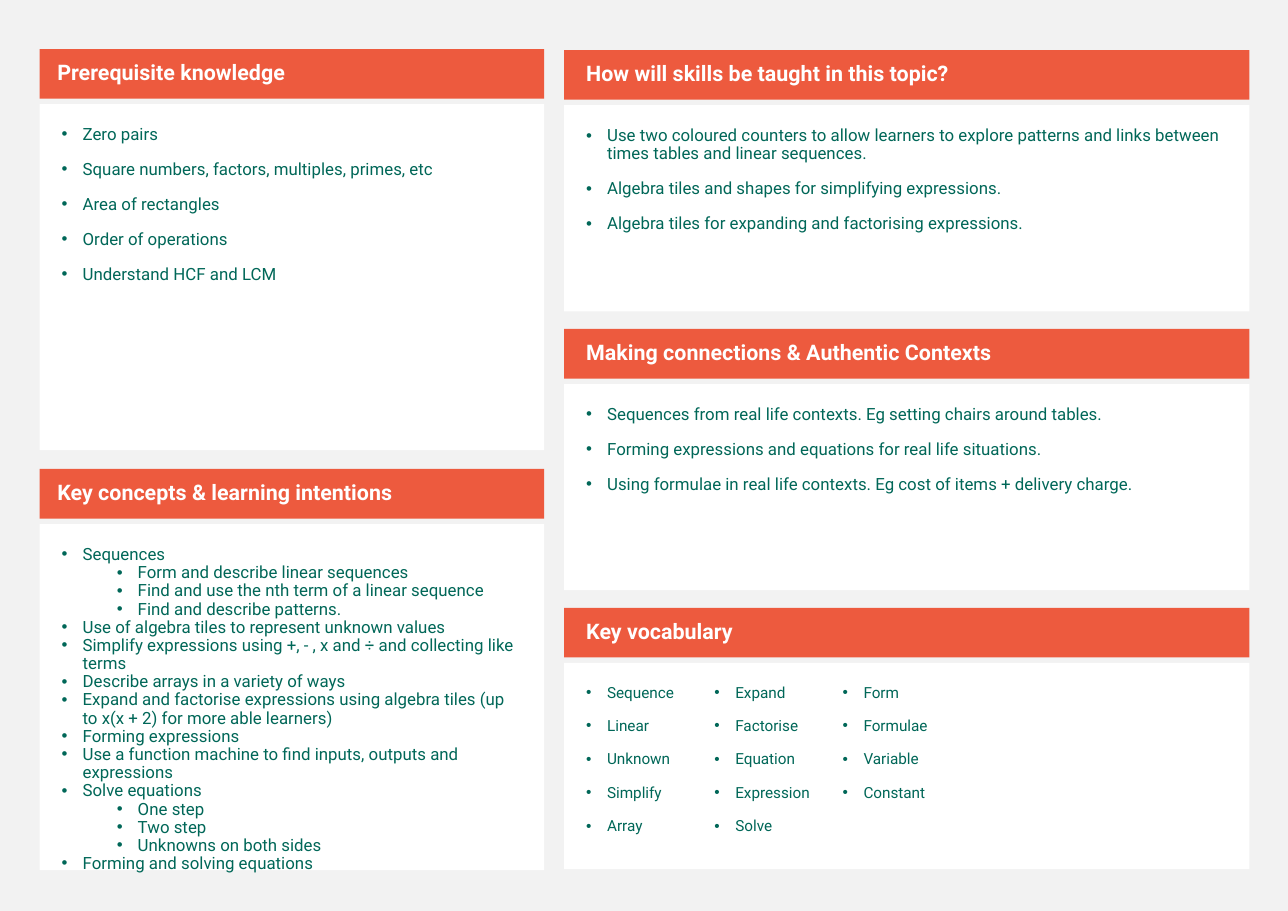
import lxml.etree
import pptx
import pptx.dml.color
import pptx.enum.shapes
import pptx.enum.text
import pptx.oxml.ns
import pptx.util

PAPER = pptx.dml.color.RGBColor(0xF2, 0xF2, 0xF2)
WHITE = pptx.dml.color.RGBColor(0xFF, 0xFF, 0xFF)
ORANGE = pptx.dml.color.RGBColor(0xED, 0x5A, 0x3E)
GREEN = pptx.dml.color.RGBColor(0x00, 0x67, 0x58)
FONT = "Roboto"
COLUMNS, ROWS = 1169, 827
CELL = pptx.util.Inches(0.01)
HEADING_ROWS, POINTS_OFFSET = 45, 50

PREREQUISITES = [
    "Zero pairs",
    "Square numbers, factors, multiples, primes, etc",
    "Area of rectangles",
    "Order of operations",
    "Understand HCF and LCM",
]
CONCEPTS = [
    "Sequences",
    [
        "Form and describe linear sequences",
        "Find and use the nth term of a linear sequence",
        "Find and describe patterns.",
    ],
    "Use of algebra tiles to represent unknown values",
    "Simplify expressions using +, - , x and ÷ and collecting like terms",
    "Describe arrays in a variety of ways",
    "Expand and factorise expressions using algebra tiles (up to x(x + 2) for more able learners)",
    "Forming expressions",
    "Use a function machine to find inputs, outputs and expressions",
    "Solve equations",
    ["One step", "Two step", "Unknowns on both sides"],
    "Forming and solving equations",
]
SKILLS = [
    "Use two coloured counters to allow learners to explore patterns and links "
    "between times tables and linear sequences.",
    "Algebra tiles and shapes for simplifying expressions.",
    "Algebra tiles for expanding and factorising expressions.",
]
CONNECTIONS = [
    "Sequences from real life contexts. Eg setting chairs around tables.",
    "Forming expressions and equations for real life situations.",
    "Using formulae in real life contexts. Eg cost of items + delivery charge.",
]
VOCABULARY = [
    "Sequence", "Linear", "Unknown", "Simplify", "Array",
    "Expand", "Factorise", "Equation", "Expression", "Solve",
    "Form", "Formulae", "Variable", "Constant",
]


def write(frame, text, size=11, color=GREEN, bold=False, before=11, level=0, bullet=True):
    """Add one formatted paragraph to a text frame."""
    first = frame.paragraphs[0]
    paragraph = frame.add_paragraph() if first.runs else first
    paragraph.alignment = pptx.enum.text.PP_ALIGN.LEFT
    paragraph.level = level
    paragraph.line_spacing = 0.9
    paragraph.space_before = pptx.util.Pt(before)
    run = paragraph.add_run()
    run.text = text
    run.font.name = FONT
    run.font.size = pptx.util.Pt(size)
    run.font.bold = bold
    run.font.color.rgb = color
    if bullet:
        properties = paragraph._p.get_or_add_pPr()
        properties.set("marL", str(int((19 + 50 * level) * CELL)))
        properties.set("indent", str(int(-19 * CELL)))
        for tag, key, value in (("a:buFont", "typeface", "Arial"), ("a:buChar", "char", "•")):
            mark = lxml.etree.SubElement(properties, pptx.oxml.ns.qn(tag))
            mark.set(key, value)


class Planner:
    """Build a topic overview from stacked panels on a fine grid."""

    def __init__(self):
        """Start a presentation with one plain slide."""
        self.deck = pptx.Presentation()
        self.deck.slide_width = COLUMNS * CELL
        self.deck.slide_height = ROWS * CELL
        self.slide = self.deck.slides.add_slide(self.deck.slide_layouts[6])
        self.slide.background.fill.solid()
        self.slide.background.fill.fore_color.rgb = PAPER

    def box(self, left, top, width, height, color, insets):
        """Draw a filled rectangle and return its text frame."""
        area = [round(cells * CELL) for cells in (left, top, width, height)]
        panel = self.slide.shapes.add_shape(pptx.enum.shapes.MSO_SHAPE.RECTANGLE, *area)
        panel.shadow.inherit = False
        panel.fill.solid()
        panel.fill.fore_color.rgb = color
        panel.line.fill.background()
        frame = panel.text_frame
        frame.word_wrap = True
        frame.margin_left, frame.margin_top, frame.margin_right, frame.margin_bottom = (
            cells * CELL for cells in insets
        )
        return frame

    def heading(self, text, left, top, width, indent):
        """Draw an orange heading bar."""
        frame = self.box(left, top, width, HEADING_ROWS, ORANGE, (indent, 5, 10, 5))
        frame.vertical_anchor = pptx.enum.text.MSO_ANCHOR.MIDDLE
        write(frame, text, size=14, color=WHITE, bold=True, bullet=False)

    def points(self, entries, left, top, width, height, text_columns=1, **style):
        """Draw a white panel of bullets, with nested lists one level in."""
        frame = self.box(left, top, width, height, WHITE, (20, 20, 20, 20))
        frame.vertical_anchor = pptx.enum.text.MSO_ANCHOR.TOP
        if text_columns > 1:
            frame._txBody.bodyPr.set("numCol", str(text_columns))
        for entry in entries:
            nested = isinstance(entry, list)
            for text in entry if nested else [entry]:
                write(frame, text, level=int(nested), **style)

    def stack(self, sections, left, width, top, bottom, gap, indent):
        """Share a column of the slide equally between sections."""
        height = (bottom - top - gap * (len(sections) - 1)) / len(sections)
        for index, (title, entries, style) in enumerate(sections):
            start = top + index * (height + gap)
            self.points(entries, left, start + POINTS_OFFSET, width,
                        height - POINTS_OFFSET, **style)
            self.heading(title, left, start, width, indent)


def main():
    """Build and save the topic overview."""
    planner = Planner()
    planner.stack(
        [
            ("Prerequisite knowledge", PREREQUISITES, {}),
            ("Key concepts & learning intentions", CONCEPTS, {"before": 0}),
        ],
        left=36, width=458, top=44.5, bottom=790, gap=17, indent=16,
    )
    planner.stack(
        [
            ("How will skills be taught in this topic?", SKILLS, {}),
            ("Making connections & Authentic Contexts", CONNECTIONS, {}),
            ("Key vocabulary", VOCABULARY, {"size": 10, "text_columns": 5}),
        ],
        left=512, width=622, top=45.5, bottom=789, gap=16, indent=20,
    )
    planner.deck.save("out.pptx")


if __name__ == "__main__":
    main()
